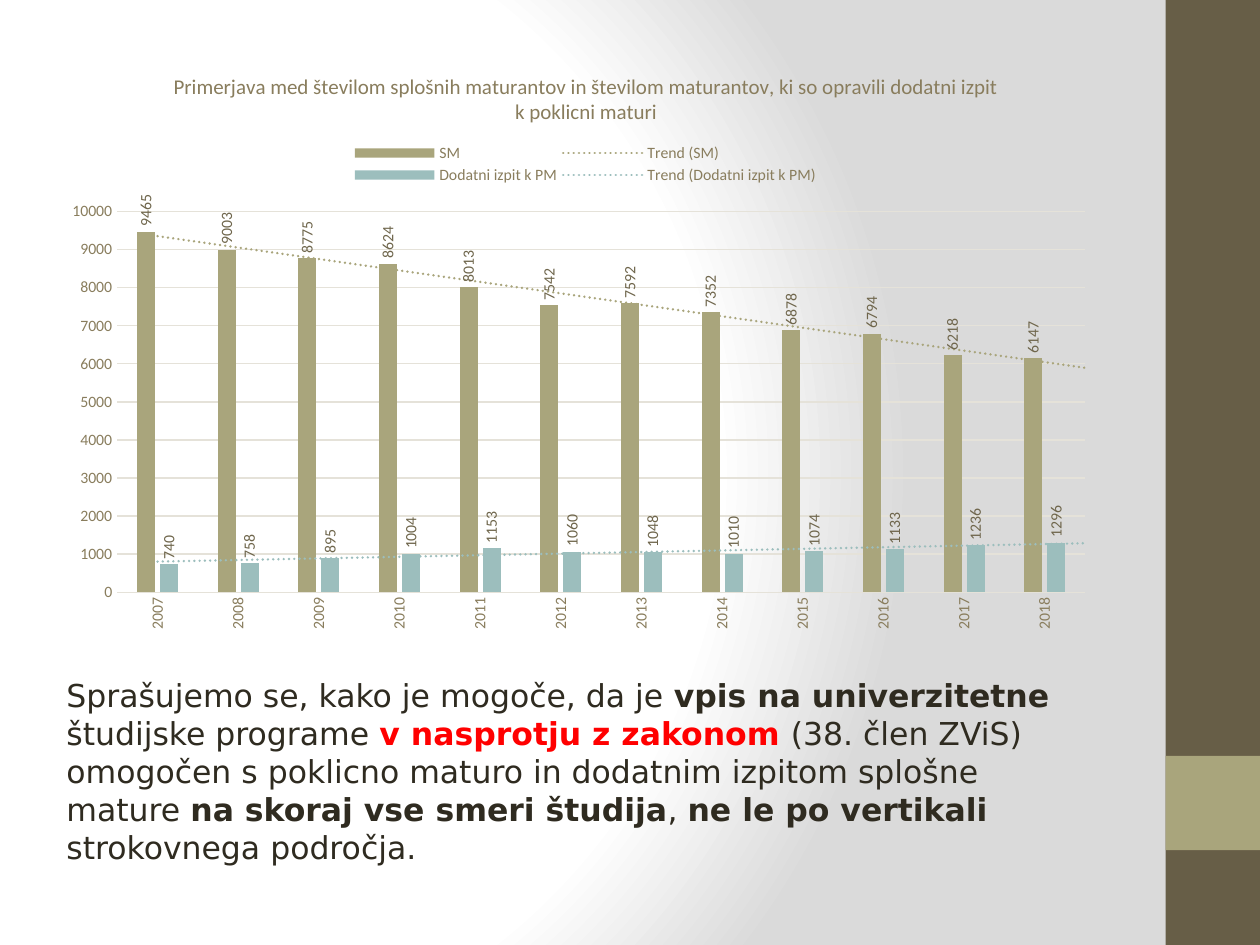
"""Slide on general matura candidates and the additional vocational matura exam."""
from dataclasses import dataclass

from pptx import Presentation, util as u
from pptx.chart import data as cd
from pptx.dml import color
from pptx.enum import chart as ch, shapes, text
from pptx.oxml import parse_xml
from pptx.oxml.ns import nsdecls, qn

DARK, OLIVE, TEAL, INK = "675E47", "A9A57C", "9CBEBD", "2F2B20"
MUTED, LABEL, GRID, RED = "897D5D", "6F664C", "E5E2D9", "FF0000"


@dataclass
class Band:
    top: float
    height: float
    fill: str


@dataclass
class Series:
    name: str
    values: tuple
    fill: str


@dataclass
class Run:
    text: str
    bold: bool = False
    color: str = INK


BANDS = [Band(0, 19.05, DARK), Band(15.24, 1.9, OLIVE)]
YEARS = [str(year) for year in range(2007, 2019)]
SERIES = [
    Series("SM", (9465, 9003, 8775, 8624, 8013, 7542,
                  7592, 7352, 6878, 6794, 6218, 6147), OLIVE),
    Series("Dodatni izpit k PM", (740, 758, 895, 1004, 1153, 1060,
                                  1048, 1010, 1074, 1133, 1236, 1296), TEAL),
]
TITLE = ("Primerjava med številom splošnih maturantov in številom maturantov, "
         "ki so opravili dodatni izpit k poklicni maturi")
RUNS = [
    Run("Sprašujemo se, kako je mogoče, da je "),
    Run("vpis na univerzitetne ", True),
    Run("študijske programe "),
    Run("v nasprotju z zakonom ", True, RED),
    Run("(38. člen ZViS) omogočen s poklicno maturo in dodatnim izpitom splošne mature "),
    Run("na skoraj vse smeri študija", True),
    Run(", "),
    Run("ne le po vertikali ", True),
    Run("strokovnega področja."),
]


def rgb(value: str):
    return color.RGBColor.from_string(value)


def box(left: float, top: float, width: float, height: float) -> list:
    return [u.Cm(v) for v in (left, top, width, height)]


def apply(obj, **formats) -> None:
    for name, value in formats.items():
        setattr(obj, name, value)


def style(font, size: float, hex_color: str, name: str = "Calibri", bold: bool = False) -> None:
    apply(font, size=u.Pt(size), name=name, bold=bold)
    font.color.rgb = rgb(hex_color)


def fill(fmt, hex_color: str) -> None:
    fmt.fill.solid()
    fmt.fill.fore_color.rgb = rgb(hex_color)


def stroke(line) -> None:
    line.color.rgb = rgb(GRID)
    line.width = u.Pt(0.75)


def set_background(s) -> None:
    stops = "".join(f'<a:gs pos="{pos * 1000}"><a:srgbClr val="{c}"/></a:gs>'
                    for pos, c in ((0, "FFFFFF"), (75, "FFFFFF"), (100, "DADADA")))
    s._element.cSld.insert(0, parse_xml(
        f'<p:bg {nsdecls("p", "a")}><p:bgPr><a:gradFill rotWithShape="1">'
        f'<a:gsLst>{stops}</a:gsLst><a:path path="circle">'
        '<a:fillToRect l="20000" t="50000" r="100000" b="50000"/></a:path>'
        '</a:gradFill><a:effectLst/></p:bgPr></p:bg>'))


def add_band(s, band: Band) -> None:
    sp = s.shapes.add_shape(shapes.MSO_SHAPE.RECTANGLE, *box(23.5, band.top, 1.9, band.height))
    sp.shadow.inherit = False
    fill(sp, band.fill)
    sp.line.fill.background()


def place(parent, index: int, inner: bool = False, **fractions) -> None:
    for old in parent.findall(qn("c:layout")):
        parent.remove(old)
    target = '<c:layoutTarget val="inner"/>' if inner else ""
    modes = "".join(f'<c:{k}Mode val="edge"/>' for k in "xy")
    sizes = "".join(f'<c:{k} val="{v}"/>' for k, v in fractions.items())
    parent.insert(index, parse_xml(
        f'<c:layout {nsdecls("c")}><c:manualLayout>{target}{modes}{sizes}'
        '</c:manualLayout></c:layout>'))


def format_series(ser, item: Series) -> None:
    fill(ser.format, item.fill)
    labels = ser.data_labels
    apply(labels, show_value=True, position=ch.XL_LABEL_POSITION.OUTSIDE_END)
    style(labels.font, 9, LABEL)
    ser._element.find(qn("c:cat")).addprevious(parse_xml(
        f'<c:trendline {nsdecls("c", "a")}><c:name>Trend ({item.name})</c:name>'
        f'<c:spPr><a:ln w="19050" cap="rnd"><a:solidFill><a:srgbClr val="{item.fill}"/>'
        '</a:solidFill><a:prstDash val="sysDot"/></a:ln></c:spPr>'
        '<c:trendlineType val="linear"/><c:forward val="0.5"/>'
        '<c:dispRSqr val="0"/><c:dispEq val="0"/></c:trendline>'))


def add_chart(s) -> None:
    data = cd.CategoryChartData()
    data.categories = YEARS
    for item in SERIES:
        data.add_series(item.name, item.values)
    chart = s.shapes.add_chart(ch.XL_CHART_TYPE.COLUMN_CLUSTERED,
                               *box(1.09, 0.91, 21.21, 11.99), data).chart
    style(chart.font, 10, INK)
    tf = chart.chart_title.text_frame
    tf.text = TITLE
    style(tf.paragraphs[0].runs[0].font, 12, MUTED)

    chart.has_legend = True
    apply(chart.legend, position=ch.XL_LEGEND_POSITION.TOP, include_in_layout=False)
    style(chart.legend.font, 9, MUTED)

    plot = chart.plots[0]
    apply(plot, gap_width=219, overlap=-27, vary_by_categories=False)
    for ser, item in zip(plot.series, SERIES):
        format_series(ser, item)

    cat, val = chart.category_axis, chart.value_axis
    for axis in (cat, val):
        apply(axis, major_tick_mark=ch.XL_TICK_MARK.NONE, minor_tick_mark=ch.XL_TICK_MARK.NONE)
        style(axis.tick_labels.font, 9, MUTED)
    apply(val, minimum_scale=0, maximum_scale=10000, major_unit=1000, has_major_gridlines=True)
    val.format.line.fill.background()
    stroke(val.major_gridlines.format.line)
    stroke(cat.format.line)

    root = chart._chartSpace
    for body in root.xpath(".//c:dLbls//a:bodyPr | .//c:catAx//a:bodyPr"):
        body.set("rot", "-5400000")
        body.set("vert", "horz")
    place(root.xpath(".//c:chart/c:title")[0], 1, x=0.11, y=0.04)
    place(root.xpath(".//c:legend")[0], 1, x=0.28, y=0.16, w=0.45, h=0.08)
    place(root.xpath(".//c:plotArea")[0], 0, True, x=0.06, y=0.28, w=0.92, h=0.64)


def add_question(s) -> None:
    tf = s.shapes.add_textbox(*box(1.09, 13.51, 21.21, 4.11)).text_frame
    apply(tf, word_wrap=True, auto_size=text.MSO_AUTO_SIZE.SHAPE_TO_FIT_TEXT)
    p = tf.paragraphs[0]
    for run in RUNS:
        r = p.add_run()
        r.text = run.text
        style(r.font, 18, run.color, "DejaVu Sans", run.bold)


def main() -> None:
    prs = Presentation()
    apply(prs, slide_width=u.Cm(25.4), slide_height=u.Cm(19.05))
    s = prs.slides.add_slide(prs.slide_layouts[6])
    set_background(s)
    for band in BANDS:
        add_band(s, band)
    add_chart(s)
    add_question(s)
    prs.save("out.pptx")


if __name__ == "__main__":
    main()
